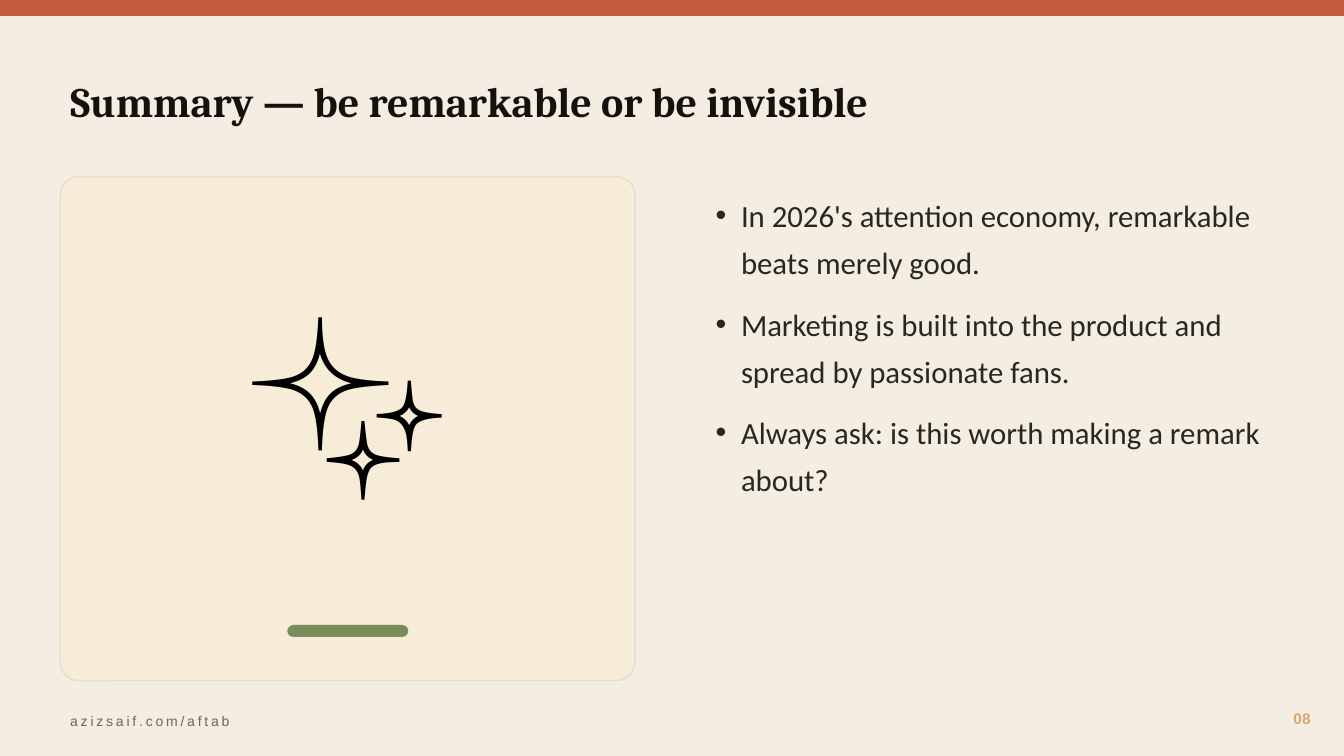
import pptx
import pptx.util
import pptx.dml.color
import pptx.enum.shapes
import pptx.enum.text
from lxml import etree

Cm = pptx.util.Cm
Pt = pptx.util.Pt
Align = pptx.enum.text.PP_ALIGN
Anchor = pptx.enum.text.MSO_ANCHOR
Kind = pptx.enum.shapes.MSO_SHAPE


def paint(target, color):
    """Give a fill or a font colour format a solid hex colour."""
    if hasattr(target, "solid"):
        target.solid()
        target = target.fore_color
    target.rgb = pptx.dml.color.RGBColor.from_string(color)


def write(box, place, lines, color, font, align=Align.LEFT, anchor=Anchor.MIDDLE):
    """Move a text shape, fill it with one paragraph per line and format it."""
    box.left, box.top, box.width, box.height = (Cm(x) for x in place)
    frame = box.text_frame
    frame.text = "\n".join(lines)
    frame.word_wrap = True
    frame.auto_size = pptx.enum.text.MSO_AUTO_SIZE.NONE
    frame.vertical_anchor = anchor
    for para in frame.paragraphs:
        para.alignment = align
        run = para.runs[0]
        for key, value in font.items():
            setattr(run.font, key, value)
        paint(run.font.color, color)
    return frame


deck = pptx.Presentation()
deck.slide_width, deck.slide_height = Cm(33.87), Cm(19.05)
slide = deck.slides.add_slide(deck.slide_layouts[1])
paint(slide.background.fill, "F4EDE2")
shapes = slide.shapes

# Top band, card and accent bar
panels = [
    (Kind.RECTANGLE, (0, 0, 33.87, 0.4), None, "C45A3D", None),
    (Kind.ROUNDED_RECTANGLE, (1.52, 4.45, 14.48, 12.7), 0.036, "F6ECD8", "E4DDD0"),
    (Kind.ROUNDED_RECTANGLE, (7.24, 15.75, 3.05, 0.3), 0.5, "7A8C5C", None),
]
for kind, place, curve, fill, edge in panels:
    panel = shapes.add_shape(kind, *(Cm(x) for x in place))
    panel.shadow.inherit = False
    paint(panel.fill, fill)
    if curve:
        panel.adjustments[0] = curve
    if edge:
        paint(panel.line.fill, edge)
        panel.line.width = Pt(1)
    else:
        panel.line.fill.background()

# Title and points
write(shapes.title, (1.52, 1.27, 30.73, 2.54),
      ["Summary — be remarkable or be invisible"], "16110D",
      {"name": "Cambria", "size": Pt(30), "bold": True})

points = [
    "In 2026's attention economy, remarkable beats merely good.",
    "Marketing is built into the product and spread by passionate fans.",
    "Always ask: is this worth making a remark about?",
]
body = write(slide.placeholders[1], (17.78, 4.57, 14.48, 12.7), points, "2A2622",
             {"name": "Calibri", "size": Pt(22)}, anchor=Anchor.TOP)
layout = {"line_spacing": 1.28, "space_before": Pt(0), "space_after": Pt(10)}
for para in body.paragraphs:
    props = para._p.get_or_add_pPr()
    props.set("marL", str(Cm(0.64)))
    props.set("indent", str(-Cm(0.64)))
    bullet = etree.SubElement(props, pptx.oxml.ns.qn("a:buChar"))
    bullet.set("char", "•")
    for key, value in layout.items():
        setattr(para, key, value)

# Emblem, page number and web address
labels = [
    ((1.52, 4.45, 14.48, 10.41), "✨", "000000",
     {"name": "Calibri", "size": Pt(150)}, Align.CENTER),
    ((30.99, 17.65, 2.29, 0.89), "08", "D9A86C",
     {"name": "Arial", "size": Pt(11), "bold": True}, Align.RIGHT),
    ((1.52, 17.78, 20.32, 0.76), "azizsaif.com/aftab", "6E665C",
     {"name": "Arial", "size": Pt(10)}, Align.LEFT),
]
for place, text, color, font, align in labels:
    box = shapes.add_textbox(0, 0, 0, 0)
    frame = write(box, place, [text], color, font, align)
# The web address comes last and is set wide
frame.paragraphs[0].runs[0].font._element.set("spc", "200")

deck.save("out.pptx")
